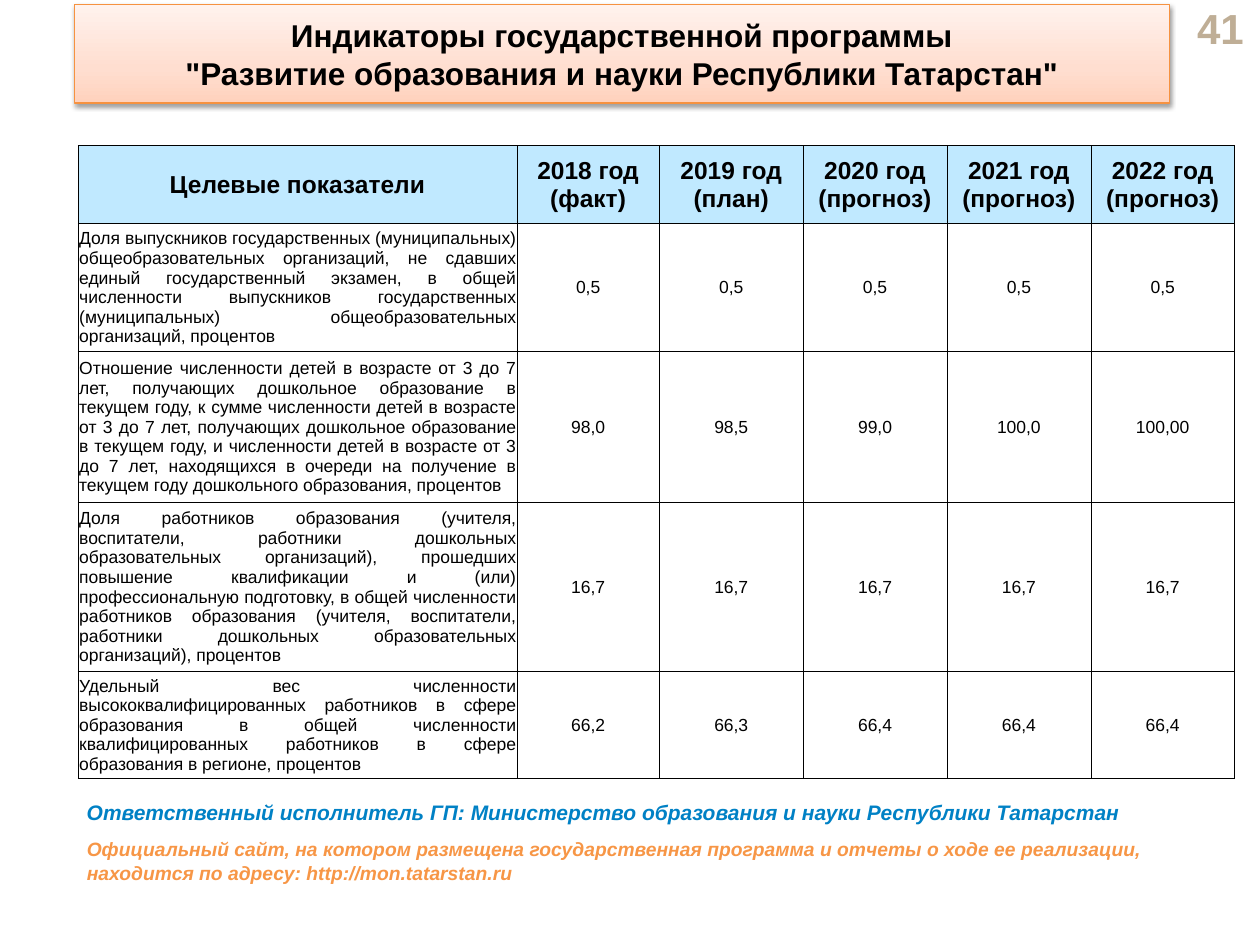
from dataclasses import dataclass

from lxml import etree
from pptx import Presentation
from pptx.dml.color import RGBColor
from pptx.enum.text import MSO_ANCHOR, MSO_AUTO_SIZE, PP_ALIGN
from pptx.oxml import parse_xml
from pptx.oxml.ns import nsdecls
from pptx.util import Pt

LEFT, CENTER, RIGHT, JUSTIFY = PP_ALIGN.LEFT, PP_ALIGN.CENTER, PP_ALIGN.RIGHT, PP_ALIGN.JUSTIFY
TOP, MIDDLE = MSO_ANCHOR.TOP, MSO_ANCHOR.MIDDLE
NO_AUTOFIT = MSO_AUTO_SIZE.NONE
FONT = "Arial"
BLACK = "000000"
HEADER_FILL = "C0E9FF"
TITLE_LINE = "F69240"
TITLE_STOPS = ((0, "FFD2BD"), (35, "FFDED0"), (100, "FFF2ED"))
COLUMN_WIDTHS = [250.8, 81.4] + [82.2] * 4
HEADER_HEIGHT = 44.6


@dataclass(frozen=True)
class TextStyle:
    size: float
    color: str = BLACK
    bold: bool = False
    italic: bool = False
    align: PP_ALIGN = CENTER


@dataclass(frozen=True)
class Caption:
    text: str
    left: float
    top: float
    width: float
    height: float
    style: TextStyle
    anchor: MSO_ANCHOR = TOP


@dataclass(frozen=True)
class Indicator:
    name: str
    values: tuple[str, ...]
    height: float


HEADER_STYLE = TextStyle(14, bold=True)
NAME_STYLE = TextStyle(10, align=JUSTIFY)
VALUE_STYLE = TextStyle(10)

TITLE = Caption(
    'Индикаторы государственной программы\v"Развитие образования и науки Республики Татарстан"',
    42.5, 2.6, 625.7, 56.2, TextStyle(18, bold=True), MIDDLE,
)
CAPTIONS = (
    Caption("41", 655.9, 3.6, 61.9, 24.5, TextStyle(24, "BFAE96", True, align=RIGHT), MIDDLE),
    Caption(
        "Ответственный исполнитель ГП: Министерство образования и науки Республики Татарстан",
        42.5, 453.6, 667.4, 21.8, TextStyle(12, "0081C5", True, True, LEFT),
    ),
    Caption(
        "Официальный сайт, на котором размещена государственная программа и отчеты о ходе "
        "ее реализации, находится по адресу: http://mon.tatarstan.ru",
        42.5, 475.2, 658, 33.9, TextStyle(11, "F79646", True, True, LEFT),
    ),
)
HEADERS = (
    "Целевые показатели", "2018 год (факт)", "2019 год (план)",
    "2020 год (прогноз)", "2021 год (прогноз)", "2022 год (прогноз)",
)
INDICATORS = (
    Indicator(
        "Доля выпускников государственных (муниципальных) общеобразовательных организаций, "
        "не сдавших единый государственный экзамен, в общей численности выпускников "
        "государственных (муниципальных) общеобразовательных организаций, процентов",
        ("0,5",) * 5, 73.1,
    ),
    Indicator(
        "Отношение численности детей в возрасте от 3 до 7 лет, получающих дошкольное "
        "образование в текущем году, к сумме численности детей в возрасте от 3 до 7 лет, "
        "получающих дошкольное образование в текущем году, и численности детей в возрасте "
        "от 3 до 7 лет, находящихся в очереди на получение в текущем году дошкольного "
        "образования, процентов",
        ("98,0", "98,5", "99,0", "100,0", "100,00"), 86.3,
    ),
    Indicator(
        "Доля работников образования (учителя, воспитатели, работники дошкольных "
        "образовательных организаций), прошедших повышение квалификации и (или) "
        "профессиональную подготовку, в общей численности работников образования (учителя, "
        "воспитатели, работники дошкольных образовательных организаций), процентов",
        ("16,7",) * 5, 96.6,
    ),
    Indicator(
        "Удельный вес численности высококвалифицированных работников в сфере образования "
        "в общей численности квалифицированных работников в сфере образования в регионе, "
        "процентов",
        ("66,2", "66,3", "66,4", "66,4", "66,4"), 61.1,
    ),
)


def rgb(color: str) -> RGBColor:
    return RGBColor.from_string(color)


def write(frame, text: str, style: TextStyle) -> None:
    frame.text = text
    for paragraph in frame.paragraphs:
        paragraph.alignment = style.align
        for run in paragraph.runs:
            run.font.name = FONT
            run.font.size = Pt(style.size)
            run.font.bold = style.bold
            run.font.italic = style.italic
            run.font.color.rgb = rgb(style.color)


def write_caption(shape, caption: Caption) -> None:
    frame = shape.text_frame
    frame.word_wrap = True
    frame.auto_size = NO_AUTOFIT
    frame.vertical_anchor = caption.anchor
    write(frame, caption.text, caption.style)


def draw_title(slide, caption: Caption) -> None:
    title = slide.shapes.title
    title.left, title.top = Pt(caption.left), Pt(caption.top)
    title.width, title.height = Pt(caption.width), Pt(caption.height)
    stops = "".join(
        f'<a:gs pos="{position * 1000}"><a:srgbClr val="{color}"/></a:gs>'
        for position, color in TITLE_STOPS
    )
    properties = title.element.spPr
    properties.append(parse_xml(
        f'<a:prstGeom {nsdecls("a")} prst="roundRect"><a:avLst/></a:prstGeom>'
    ))
    properties.append(parse_xml(
        f'<a:gradFill {nsdecls("a")} rotWithShape="1"><a:gsLst>{stops}</a:gsLst>'
        '<a:lin ang="16200000" scaled="0"/></a:gradFill>'
    ))
    title.line.color.rgb = rgb(TITLE_LINE)
    title.line.width = Pt(0.75)
    properties.append(parse_xml(
        f'<a:effectLst {nsdecls("a")}><a:outerShdw blurRad="{Pt(3.1)}" dist="{Pt(1.6)}" '
        f'dir="5400000" rotWithShape="0"><a:srgbClr val="{BLACK}"><a:alpha val="38000"/>'
        '</a:srgbClr></a:outerShdw></a:effectLst>'
    ))
    write_caption(title, caption)


def draw_caption(slide, caption: Caption) -> None:
    box = slide.shapes.add_textbox(
        Pt(caption.left), Pt(caption.top), Pt(caption.width), Pt(caption.height)
    )
    write_caption(box, caption)


def add_borders(cell) -> None:
    properties = cell._tc.get_or_add_tcPr()
    for side in ("lnL", "lnR", "lnT", "lnB"):
        properties.append(etree.fromstring(
            f'<a:{side} {nsdecls("a")} w="{Pt(0.25)}"><a:solidFill>'
            f'<a:srgbClr val="{BLACK}"/></a:solidFill></a:{side}>'
        ))


def fill_cell(cell, text: str, style: TextStyle, fill: str | None = None) -> None:
    cell.margin_left = cell.margin_right = cell.margin_top = Pt(0.7)
    cell.margin_bottom = Pt(0)
    cell.vertical_anchor = MIDDLE
    add_borders(cell)
    if fill:
        cell.fill.solid()
        cell.fill.fore_color.rgb = rgb(fill)
    else:
        cell.fill.background()
    write(cell.text_frame, text, style)


def draw_indicators(slide) -> None:
    heights = [HEADER_HEIGHT] + [indicator.height for indicator in INDICATORS]
    table = slide.shapes.add_table(
        len(heights), len(HEADERS), Pt(44.6), Pt(83),
        Pt(sum(COLUMN_WIDTHS)), Pt(sum(heights)),
    ).table
    for column, width in zip(table.columns, COLUMN_WIDTHS):
        column.width = Pt(width)
    for row, height in zip(table.rows, heights):
        row.height = Pt(height)
    for column, header in enumerate(HEADERS):
        fill_cell(table.cell(0, column), header, HEADER_STYLE, HEADER_FILL)
    for row, indicator in enumerate(INDICATORS, 1):
        fill_cell(table.cell(row, 0), indicator.name, NAME_STYLE)
        for column, value in enumerate(indicator.values, 1):
            fill_cell(table.cell(row, column), value, VALUE_STYLE)


def main() -> None:
    deck = Presentation()
    deck.slide_width, deck.slide_height = Pt(720), Pt(540)
    slide = deck.slides.add_slide(deck.slide_layouts[5])
    draw_title(slide, TITLE)
    draw_indicators(slide)
    for caption in CAPTIONS:
        draw_caption(slide, caption)
    deck.save("out.pptx")


if __name__ == "__main__":
    main()
